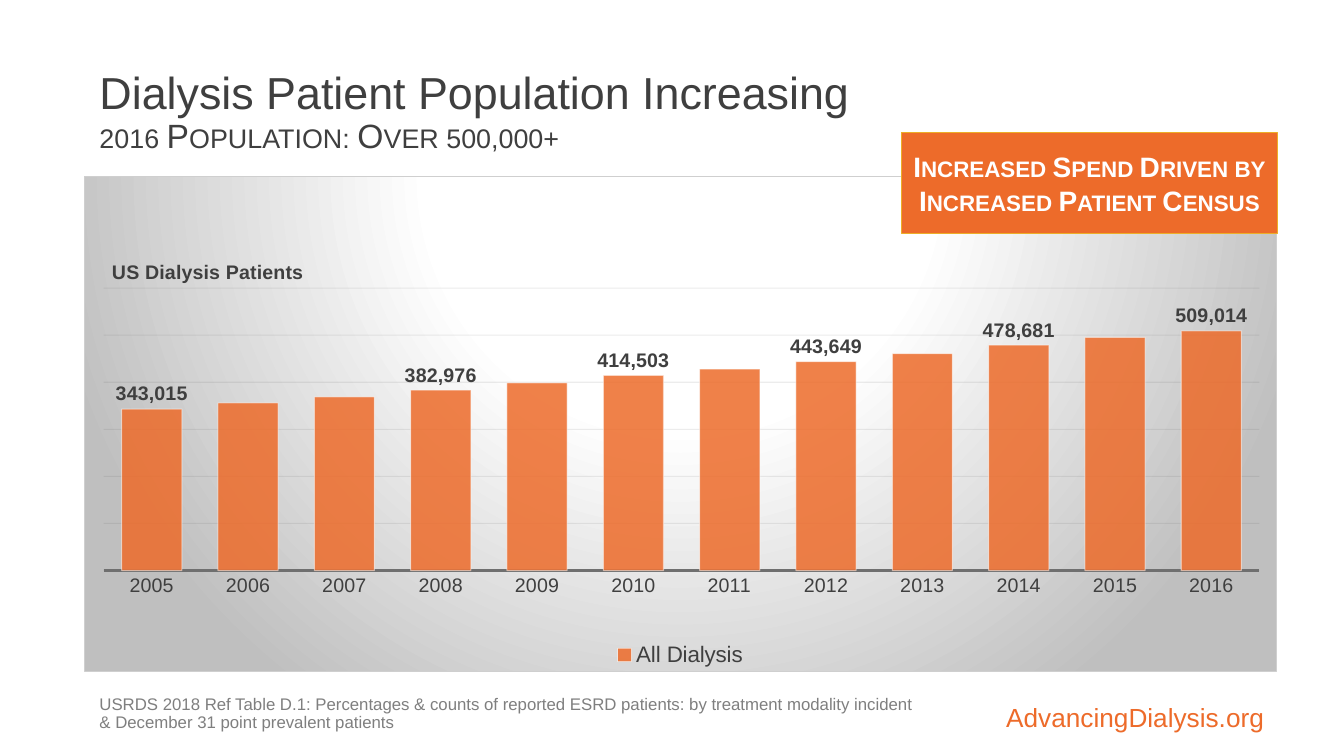
from lxml.etree import SubElement as Sub
from pptx import Presentation
from pptx.chart.data import CategoryChartData as Data
from pptx.dml.color import RGBColor as RGB
from pptx.enum.chart import XL_CHART_TYPE as Kind, XL_LABEL_POSITION as Spot
from pptx.enum.chart import XL_LEGEND_POSITION as Side, XL_TICK_LABEL_POSITION as Tick
from pptx.enum.chart import XL_TICK_MARK as Mark
from pptx.enum.shapes import MSO_SHAPE as Form
from pptx.enum.text import MSO_ANCHOR as Anchor, PP_ALIGN as Align
from pptx.oxml import parse_xml
from pptx.oxml.ns import nsdecls, qn
from pptx.util import Inches, Pt

ORANGE = RGB(0xED, 0x6B, 0x2A)
GOLD = RGB(0xED, 0xAE, 0x28)
DARK = RGB(0x3F, 0x3F, 0x3F)
GRAY = RGB(0x7F, 0x7F, 0x7F)
AXIS = RGB(0x6F, 0x6F, 0x6F)
GRID = RGB(0x49, 0x49, 0x49)
WHITE = RGB(0xFF, 0xFF, 0xFF)

COLS, ROWS = 16, 9
YEARS = [str(year) for year in range(2005, 2017)]
COUNTS = [343015, 356077, 368901, 382976, 398865, 414503,
          427927, 443649, 460800, 478681, 495433, 509014]
SHOWN = {"2005", "2008", "2010", "2012", "2014", "2016"}

PANEL = f"""<c:spPr {nsdecls('c', 'a')}>
  <a:gradFill rotWithShape="1"><a:gsLst>
    <a:gs pos="0"><a:srgbClr val="FFFFFF"/></a:gs>
    <a:gs pos="39000"><a:srgbClr val="FFFFFF"/></a:gs>
    <a:gs pos="100000"><a:srgbClr val="BFBFBF"/></a:gs></a:gsLst>
    <a:path path="circle">
      <a:fillToRect l="50000" t="-80000" r="50000" b="180000"/></a:path>
  </a:gradFill>
  <a:ln w="9525"><a:solidFill><a:srgbClr val="CFCFCF"/></a:solidFill></a:ln>
</c:spPr>"""


class Deck:
    """Style and current slide; lengths are columns and rows of the grid."""
    face = "Arial"

    def __init__(self):
        self.show = Presentation()
        self.show.slide_width, self.show.slide_height = Inches(13.33), Inches(7.5)
        self.slide = self.show.slides.add_slide(self.show.slide_layouts[6])

    def area(self, x, y, w, h):
        col, row = self.show.slide_width / COLS, self.show.slide_height / ROWS
        return int(x * col), int(y * row), int(w * col), int(h * row)

    def style(self, font, size, color, bold=False):
        font.name, font.size, font.bold = self.face, Pt(size), bold
        font.color.rgb = color

    def add_run(self, para, text, size, color, bold=False, small=False):
        run = para.add_run()
        run.text = text
        self.style(run.font, size, color, bold)
        if small:
            run.font._element.set("cap", "small")

    def text(self, area, runs, anchor=Anchor.TOP, align=Align.LEFT, pad=(0.07, 0.04)):
        frame = self.slide.shapes.add_textbox(*self.area(*area)).text_frame
        frame.word_wrap, frame.vertical_anchor = True, anchor
        frame.margin_left = frame.margin_right = Inches(pad[0])
        frame.margin_top = frame.margin_bottom = Inches(pad[1])
        para = frame.paragraphs[0]
        para.alignment, para.line_spacing = align, 0.9
        for i, run in enumerate(runs):
            if i:
                para.add_line_break()
            self.add_run(para, *run)

    def badge(self, area, text):
        box = self.slide.shapes.add_shape(Form.RECTANGLE, *self.area(*area))
        box.shadow.inherit = False
        box.fill.solid()
        box.fill.fore_color.rgb = ORANGE
        box.line.color.rgb, box.line.width = GOLD, Pt(0.5)
        frame = box.text_frame
        frame.word_wrap, frame.vertical_anchor = True, Anchor.MIDDLE
        frame.paragraphs[0].alignment = Align.CENTER
        self.add_run(frame.paragraphs[0], text, 20, WHITE, True, True)

    def place(self, owner, index, **spots):
        for old in owner.findall(qn("c:layout")):
            owner.remove(old)
        lay = parse_xml(f"<c:layout {nsdecls('c')}><c:manualLayout/></c:layout>")
        for name, val in spots.items():
            Sub(lay[0], qn(f"c:{name}")).set("val", str(val))
        owner.insert(index, lay)

    def fade(self, part, share):
        for tone in part.iter(qn("a:srgbClr")):
            Sub(tone, qn("a:alpha")).set("val", str(share * 1000))

    def chart(self, area):
        data = Data(number_format="#,##0")
        data.categories = YEARS
        data.add_series("All Dialysis", COUNTS)
        chart = self.slide.shapes.add_chart(
            Kind.COLUMN_CLUSTERED, *self.area(*area), data).chart
        root = chart.element
        self.style(chart.font, 10, DARK)
        chart.has_title = False
        root.find(qn("c:chart")).addnext(parse_xml(PANEL))
        self.place(root.find(".//" + qn("c:plotArea")), 0, layoutTarget="inner",
                   xMode="edge", yMode="edge", x=0.016, y=0.225, w=0.97, h=0.571)
        chart.has_legend = True
        chart.legend.position = Side.BOTTOM
        chart.legend.include_in_layout = False
        self.style(chart.legend.font, 16, DARK)
        self.axes(chart)
        self.bars(chart)

    def axes(self, chart):
        cat, val = chart.category_axis, chart.value_axis
        for axis in (cat, val):
            axis.major_tick_mark = axis.minor_tick_mark = Mark.NONE
            self.style(axis.tick_labels.font, 14, DARK)
        cat.format.line.color.rgb, cat.format.line.width = AXIS, Pt(1.5)
        val.minimum_scale, val.maximum_scale, val.major_unit = 0, 600000, 100000
        val.tick_label_position = Tick.NONE
        val.format.line.fill.background()
        grid = val.major_gridlines.format.line
        grid.color.rgb, grid.width = GRID, Pt(0.75)
        self.fade(chart.element.find(".//" + qn("c:majorGridlines")), 10)
        # Level axis title above the plot
        title = val.axis_title
        self.add_run(title.text_frame.paragraphs[0], "US Dialysis Patients", 14, DARK, True)
        top = chart.element.find(".//" + qn("c:valAx")).find(qn("c:title"))
        for body in top.iter(qn("a:bodyPr")):
            body.set("rot", "0")
            body.set("vert", "horz")
        self.place(top, 1, xMode="edge", yMode="edge", x=0.02, y=0.16)

    def bars(self, chart):
        plot = chart.plots[0]
        plot.gap_width, plot.vary_by_categories = 60, False
        bars = plot.series[0]
        bars.format.fill.solid()
        bars.format.fill.fore_color.rgb = ORANGE
        bars.format.line.color.rgb, bars.format.line.width = WHITE, Pt(0.75)
        look = chart.element.find(".//" + qn("c:ser")).find(qn("c:spPr"))
        self.fade(look.find(qn("a:solidFill")), 85)
        self.fade(look.find(qn("a:ln")), 50)
        # Value labels for chosen years only
        labels = bars.data_labels
        labels.show_value, labels.position = True, Spot.OUTSIDE_END
        self.style(labels.font, 14, DARK, True)
        hidden = [i for i, year in enumerate(YEARS) if year not in SHOWN]
        group = chart.element.find(".//" + qn("c:ser")).find(qn("c:dLbls"))
        for spot, i in enumerate(hidden):
            group.insert(spot, parse_xml(
                f'<c:dLbl {nsdecls("c")}><c:idx val="{i}"/><c:delete val="1"/></c:dLbl>'))


def main():
    deck = Deck()
    # Site address
    deck.text((9.74, 8, 5.44, 0.73), [("AdvancingDialysis.org", 18.7, ORANGE)],
              Anchor.BOTTOM, Align.RIGHT, (0.11, 0))
    # Heading
    deck.text((1.1, 0.48, 10.2, 1.74),
              [("Dialysis Patient Population Increasing", 32, DARK),
               ("2016 Population: Over 500,000+", 24, DARK, False, True)], Anchor.MIDDLE)
    # Source note
    deck.text((1.1, 8.24, 9.97, 0.52),
              [("USRDS 2018 Ref Table D.1: Percentages & counts of reported ESRD patients: "
                "by treatment modality incident & December 31 point prevalent patients",
                12, GRAY)])
    # Chart and callout
    deck.chart((1, 2.1, 14.2, 5.9))
    deck.badge((10.73, 1.58, 4.48, 1.2),
               "Increased Spend Driven by Increased Patient Census")
    deck.show.save("out.pptx")


if __name__ == "__main__":
    main()
